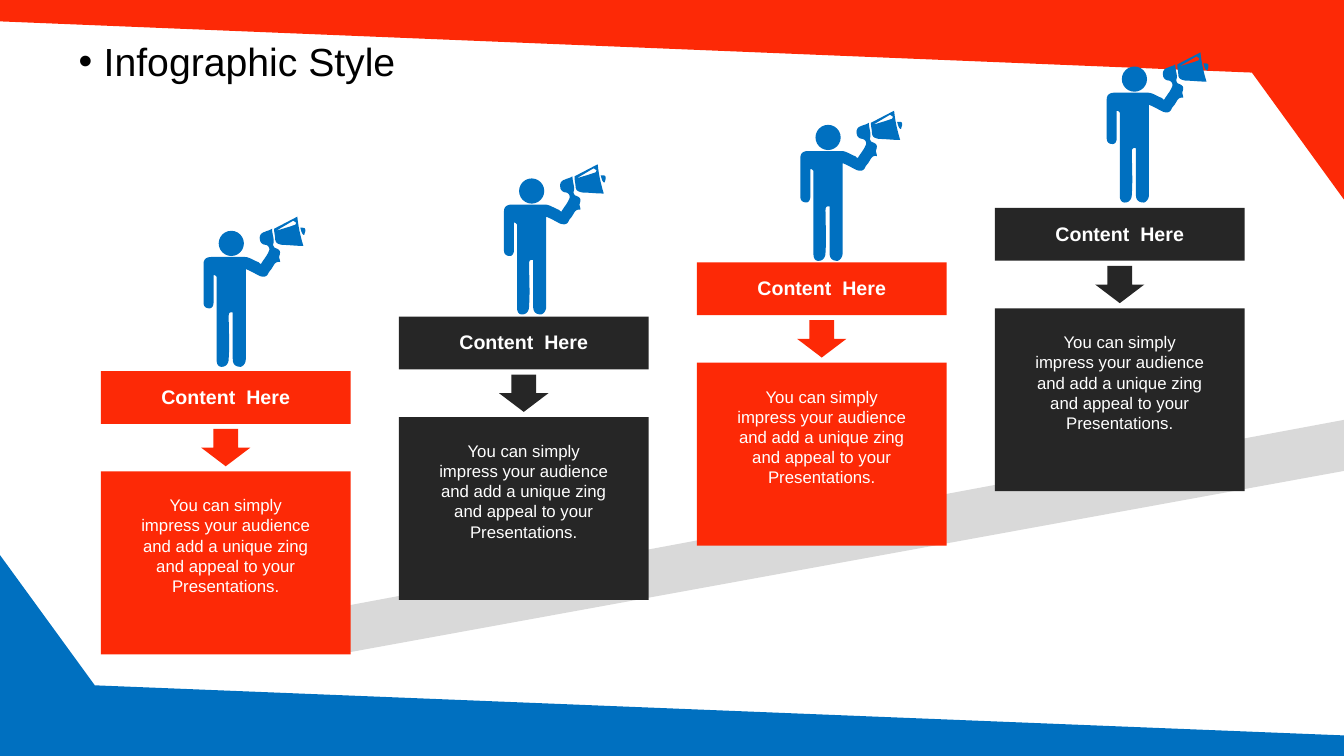
from lxml import etree
from pptx import Presentation
from pptx.dml.color import RGBColor
from pptx.enum.shapes import MSO_SHAPE
from pptx.enum.text import MSO_ANCHOR, PP_ALIGN
from pptx.oxml.ns import qn
from pptx.util import Cm, Pt

RECT, DOWN_ARROW, OVAL = MSO_SHAPE.RECTANGLE, MSO_SHAPE.DOWN_ARROW, MSO_SHAPE.OVAL
TOP, MIDDLE = MSO_ANCHOR.TOP, MSO_ANCHOR.MIDDLE
LEFT, CENTER = PP_ALIGN.LEFT, PP_ALIGN.CENTER

COLORS = {"red": "FD2906", "blue": "0070C0", "dark": "262626",
          "grey": "D9D9D9", "white": "FFFFFF", "black": "000000"}

# Slide decoration, corner points in cm
RED_CORNER = [(34.11, 5.36), (31.55, 1.83), (-0.23, 0.53), (-0.2, -0.1), (34.06, -0.08)]
BLUE_CORNER = [(-0.18, 13.74), (2.39, 17.27), (34.06, 18.54), (34.04, 19.2), (-0.15, 19.18)]
RAMP = [(2.59, 16.41), (8.84, 16.43), (33.91, 11.86), (33.93, 10.57)]

# Announcer outlines on a fine grid: two numbers are a point, six a Bezier curve
GRID = Cm(0.0254)
CURVE_STEPS = 6
BODY = [
    (10, 58), (10, 85), (10, 89, 8, 91, 6, 91), (2, 91, 0, 89, 0, 85),
    (0, 47), (0, 42, 3, 40, 8, 40), (41, 40), (45, 40, 49, 43, 54, 45),
    (55, 45, 56, 47, 57, 47), (60, 42, 63, 39, 65, 34), (66, 32, 65, 29, 62, 28),
    (58, 28, 56, 25, 56, 23), (55, 19, 57, 16, 61, 15), (63, 14, 65, 14, 68, 12),
    (68, 18, 71, 23, 69, 28), (69, 28, 70, 31, 71, 31), (76, 33, 77, 34, 75, 40),
    (75, 41, 76, 43, 76, 45), (71, 44, 70, 48, 68, 51), (67, 53, 65, 54, 64, 57),
    (62, 60, 60, 60, 56, 59), (52, 57, 47, 54, 42, 52), (42, 141),
    (42, 145, 40, 148, 37, 149), (32, 149, 29, 147, 29, 141), (29, 95),
    (25, 94, 25, 97, 25, 99), (25, 112, 26, 127, 25, 141),
    (25, 145, 23, 149, 18, 149), (15, 149, 13, 147, 13, 142), (13, 60),
    (13, 59, 11, 58, 11, 58),
]
HORN = [(70, 12), (93, 0), (94, 10, 96, 19, 99, 29), (91, 29, 85, 28, 78, 28),
        (73, 27, 71, 26, 71, 21), (71, 19, 70, 16, 70, 12)]
HORN_GLINT = [(72, 14), (85, 10), (91, 8), (92, 6), (89, 4)]
HORN_TIP = [(96, 11), (100, 11, 101, 11, 101, 14), (101, 15, 100, 17, 100, 18),
            (99, 18), (97, 16, 97, 14, 96, 11)]
HEAD_LEFT, HEAD_TOP, HEAD_SIZE = 15, 14, 25

# Cards climb to the right in equal steps (cm)
CARD_LEFT, CARD_TOP, CARD_WIDTH = 2.54, 9.35, 6.3
STEP_RIGHT, STEP_UP = 7.51, 1.37
CARD_COLORS = ["red", "dark", "red", "dark"]
ANNOUNCER_PLACES = [(5.13, 5.46), (12.7, 4.14), (20.17, 2.79), (27.89, 1.32)]

HEADING = "Content  Here"
MESSAGE = ("You can simply impress your audience and add a unique zing "
           "and appeal to your Presentations.")
TITLE_FORMAT = {"size": Pt(28), "bold": False}
HEADING_FORMAT = {"size": Pt(14), "bold": True}
MESSAGE_FORMAT = {"size": Pt(12), "bold": False}


def paint(shape, color):
    """Give a shape a plain fill with no line and no shadow."""
    shape.shadow.inherit = False
    shape.fill.solid()
    shape.fill.fore_color.rgb = RGBColor.from_string(COLORS[color])
    shape.line.fill.background()


def add_preset(shapes, kind, box, color):
    paint(shapes.add_shape(kind, *box), color)


def flatten(outline):
    """Turn points and Bezier curves into a list of points."""
    points = []
    for part in outline:
        if len(part) == 2:
            points.append(part)
            continue
        x0, y0 = points[-1]
        x1, y1, x2, y2, x3, y3 = part
        for step in range(1, CURVE_STEPS + 1):
            t = step / CURVE_STEPS
            a, b, c, d = (1 - t) ** 3, 3 * t * (1 - t) ** 2, 3 * t * t * (1 - t), t ** 3
            points.append((a * x0 + b * x1 + c * x2 + d * x3,
                           a * y0 + b * y1 + c * y2 + d * y3))
    return points


def add_outline(shapes, outlines, color, unit, origin=(0, 0)):
    """Draw one filled freeform; outlines after the first are holes."""
    contours = [[(x * unit, y * unit) for x, y in flatten(outline)] for outline in outlines]
    builder = shapes.build_freeform(*contours[0][0])
    builder.add_line_segments(contours[0][1:], close=True)
    for hole in contours[1:]:
        builder.move_to(*hole[0])
        builder.add_line_segments(hole[1:], close=True)
    paint(builder.convert_to_shape(*origin), color)


def add_text(slide, box, text, font_format, color="white", align=CENTER, anchor=TOP):
    frame = slide.shapes.add_textbox(*map(Cm, box)).text_frame
    frame.word_wrap = True
    frame.vertical_anchor = anchor
    paragraph = frame.paragraphs[0]
    paragraph.alignment = align
    run = paragraph.add_run()
    run.text = text
    run.font.name = "Arial"
    run.font.color.rgb = RGBColor.from_string(COLORS[color])
    for attribute, value in font_format.items():
        setattr(run.font, attribute, value)
    return paragraph


def add_title(slide):
    title = add_text(slide, (1.73, 0.94, 32.1, 2), "Infographic Style",
                     TITLE_FORMAT, "black", LEFT)
    title.line_spacing = 0.9
    title.space_before = Pt(10)
    properties = title._p.get_or_add_pPr()
    properties.set("marL", str(Cm(0.635)))
    properties.set("indent", str(-Cm(0.635)))
    etree.SubElement(properties, qn("a:buFont")).set("typeface", "Arial")
    etree.SubElement(properties, qn("a:buChar")).set("char", "•")


def add_card(slide, left, top, color):
    parts = [(RECT, 0, 0, CARD_WIDTH, 1.33),
             (RECT, 0, 2.53, CARD_WIDTH, 4.61),
             (DOWN_ARROW, 2.53, 1.46, 1.24, 0.94)]
    for kind, right, down, width, height in parts:
        box = [Cm(value) for value in (left + right, top + down, width, height)]
        add_preset(slide.shapes, kind, box, color)
    add_text(slide, (left + 1.13, top + 0.21, 4.04, 0.86), HEADING,
             HEADING_FORMAT, anchor=MIDDLE)
    add_text(slide, (left + 0.75, top + 3, 4.8, 2.82), MESSAGE, MESSAGE_FORMAT)


def add_announcer(slide, left, top):
    shapes = slide.shapes.add_group_shape().shapes
    origin = Cm(left), Cm(top)
    for outlines in ([BODY], [HORN, HORN_GLINT], [HORN_TIP]):
        add_outline(shapes, outlines, "blue", GRID, origin)
    head = (origin[0] + HEAD_LEFT * GRID, origin[1] + HEAD_TOP * GRID,
            HEAD_SIZE * GRID, HEAD_SIZE * GRID)
    add_preset(shapes, OVAL, head, "blue")


def main():
    presentation = Presentation()
    presentation.slide_width, presentation.slide_height = Cm(33.87), Cm(19.05)
    slide = presentation.slides.add_slide(presentation.slide_layouts[6])

    for outline, color in ((RED_CORNER, "red"), (BLUE_CORNER, "blue"), (RAMP, "grey")):
        add_outline(slide.shapes, [outline], color, Cm(1))
    add_title(slide)
    for index, color in enumerate(CARD_COLORS):
        add_card(slide, CARD_LEFT + index * STEP_RIGHT, CARD_TOP - index * STEP_UP, color)
    for left, top in ANNOUNCER_PLACES:
        add_announcer(slide, left, top)

    presentation.save("out.pptx")


if __name__ == "__main__":
    main()
